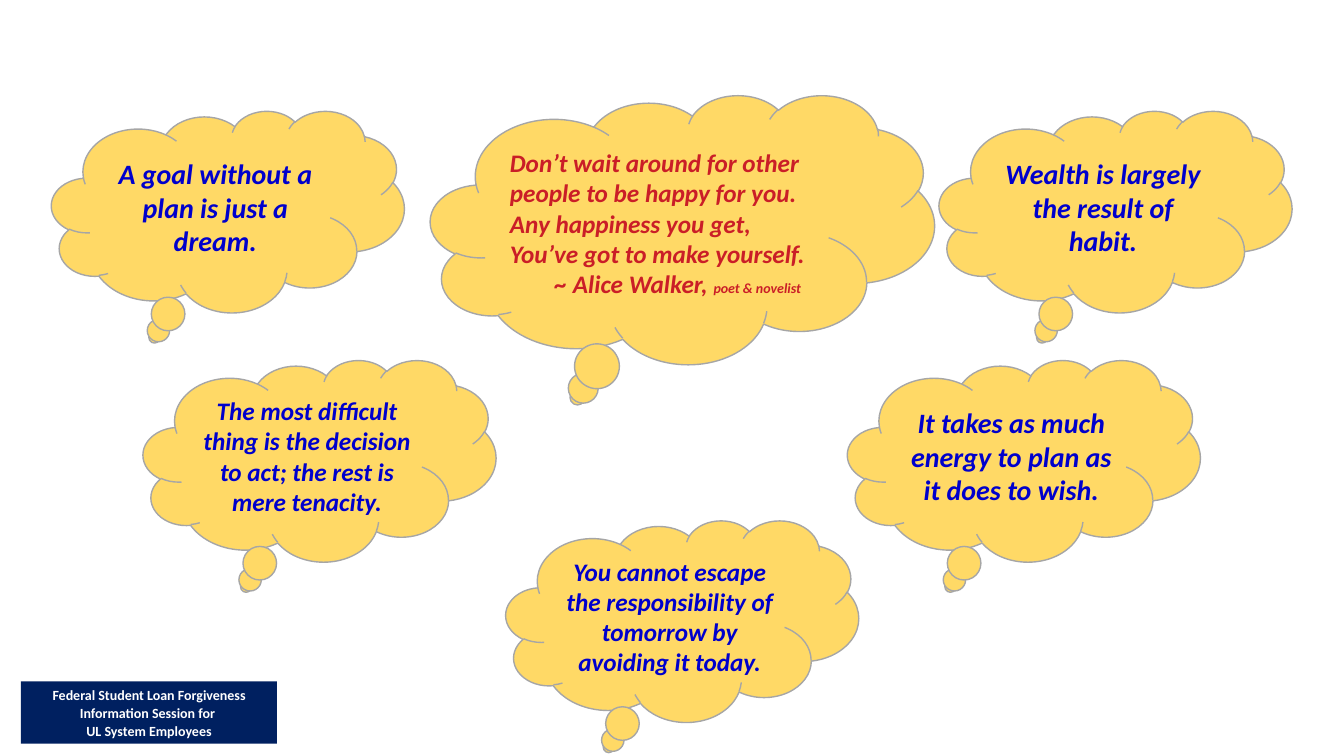
from pptx import Presentation
from pptx.dml.color import RGBColor
from pptx.enum import shapes, text
from pptx.util import Cm, Pt

COLORS = {
    "cloud": "FFD966",
    "outline": "A6A6A6",
    "quote": "0000CC",
    "walker": "CA1E27",
    "navy": "002060",
    "white": "FFFFFF",
}


def add_box(s, kind, box, fill, line=None):
    sp = s.shapes.add_shape(kind, *[Cm(v) for v in box])
    sp.shadow.inherit = False
    sp.fill.solid()
    sp.fill.fore_color.rgb = RGBColor.from_string(COLORS[fill])
    if line:
        sp.line.color.rgb = RGBColor.from_string(COLORS[line])
        sp.line.width = Pt(1)
    else:
        sp.line.fill.background()
    tf = sp.text_frame
    tf.word_wrap = True
    tf.vertical_anchor = text.MSO_ANCHOR.MIDDLE
    return tf


def add_run(p, words, size, color, italic=True):
    r = p.add_run()
    r.text = words
    r.font.name = "Calibri"
    r.font.size = Pt(size)
    r.font.bold = True
    r.font.italic = italic
    r.font.color.rgb = RGBColor.from_string(COLORS[color])


prs = Presentation()
prs.slide_width = Cm(33.87)
prs.slide_height = Cm(19.05)
s = prs.slides.add_slide(prs.slide_layouts[6])

tf = add_box(s, shapes.MSO_SHAPE.RECTANGLE, (0.53, 17.17, 6.45, 1.57), "navy")
p = tf.paragraphs[0]
p.alignment = text.PP_ALIGN.CENTER
p.line_spacing = 1.07
p.space_after = Pt(8)
add_run(p, "Federal Student Loan Forgiveness Information Session for ", 10, "white", False)
p.add_line_break()
add_run(p, "UL System Employees", 10, "white", False)

quotes = [
    (1.3, 2.79, 20, "A goal without a plan is just a dream."),
    (3.61, 9.07, 18, "The most difficult thing is the decision to act; the rest is mere tenacity."),
    (23.67, 2.79, 20, "Wealth is largely the result of habit."),
    (21.36, 9.07, 20, "It takes as much energy to plan as it does to wish."),
    (12.75, 13.11, 18, "You cannot escape the responsibility of tomorrow by avoiding it today."),
]
for left, top, size, quote in quotes:
    tf = add_box(s, shapes.MSO_SHAPE.CLOUD_CALLOUT, (left, top, 8.89, 5.08), "cloud", "outline")
    p = tf.paragraphs[0]
    p.alignment = text.PP_ALIGN.CENTER
    add_run(p, quote, size, "quote")

tf = add_box(s, shapes.MSO_SHAPE.CLOUD_CALLOUT, (10.85, 2.39, 12.7, 6.78), "cloud", "outline")
walker_lines = [
    [("Don’t wait around for other people to be happy for you.", 18)],
    [("Any happiness you get,", 18)],
    [("You’ve got to make yourself.", 18)],
    [("~ Alice Walker, ", 18), ("poet & novelist", 10)],
]
for i, line in enumerate(walker_lines):
    p = tf.add_paragraph() if i else tf.paragraphs[0]
    p.alignment = text.PP_ALIGN.LEFT
    for words, size in line:
        add_run(p, words, size, "walker")
p._p.get_or_add_pPr().set("marL", str(Cm(1.13)))

prs.save("out.pptx")
